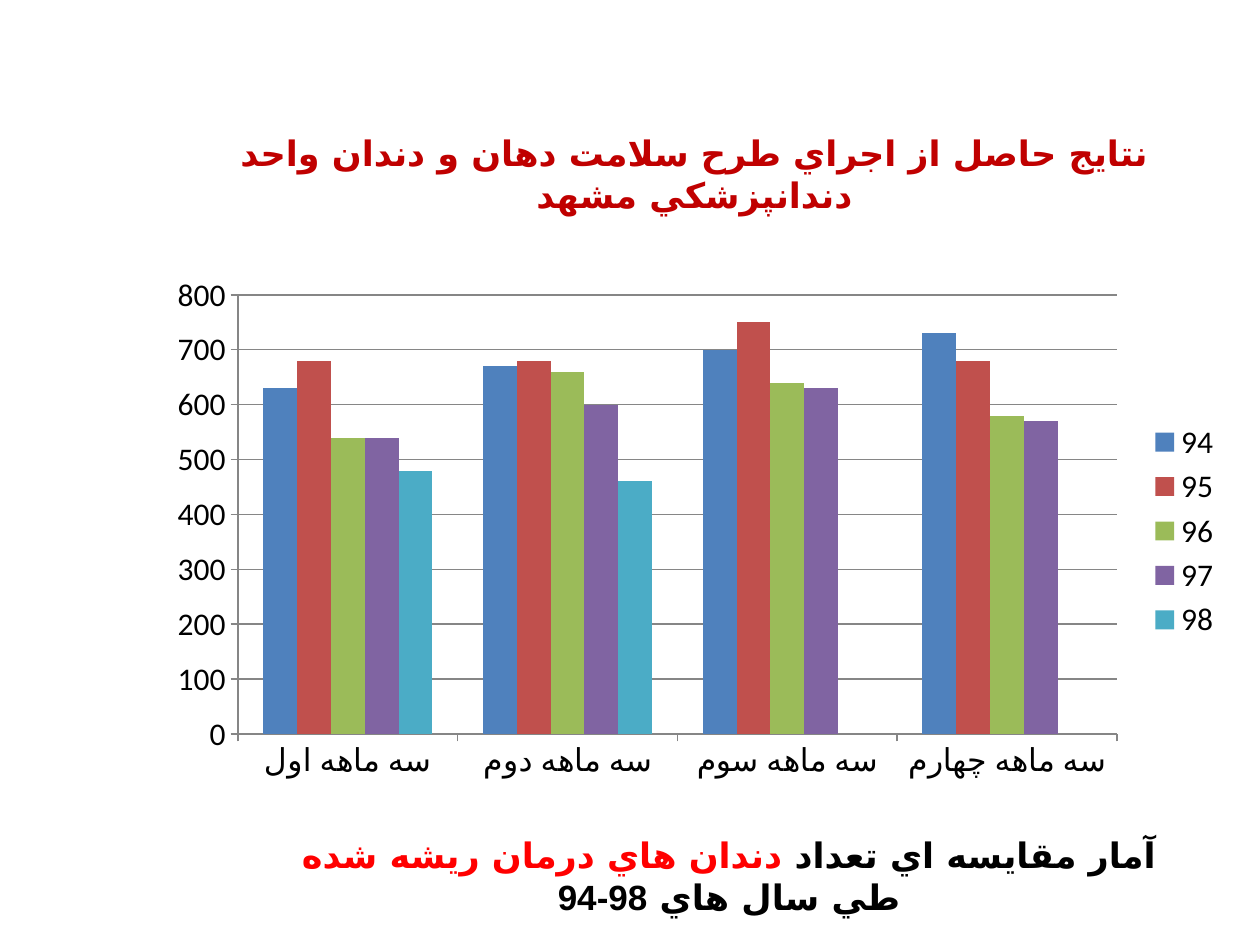
from lxml import etree
from pptx import Presentation
from pptx.chart.data import CategoryChartData
from pptx.dml.color import RGBColor
from pptx.enum.chart import XL_CHART_TYPE, XL_LEGEND_POSITION, XL_TICK_MARK
from pptx.enum.text import MSO_ANCHOR, PP_ALIGN
from pptx.oxml import parse_xml
from pptx.oxml.ns import nsdecls, qn
from pptx.util import Pt

CLUSTERED = XL_CHART_TYPE.COLUMN_CLUSTERED
RIGHT = XL_LEGEND_POSITION.RIGHT
OUTSIDE = XL_TICK_MARK.OUTSIDE
NO_TICK = XL_TICK_MARK.NONE
TOP, MIDDLE = MSO_ANCHOR.TOP, MSO_ANCHOR.MIDDLE
CENTER = PP_ALIGN.CENTER

SCALE = 914400 / 126
FONT = "Calibri"
PERSIAN_FONT = "DejaVu Sans"
DIGIT_FONT = "Arial"
COLORS = {
    "title": "C00000", "text": "000000", "accent": "FF0000", "axis": "868686",
    "94": "4F81BD", "95": "C0504D", "96": "9BBB59", "97": "8064A2", "98": "4BACC6",
}
QUARTERS = ["سه ماهه اول", "سه ماهه دوم", "سه ماهه سوم", "سه ماهه چهارم"]
YEARS = {
    "94": [630, 670, 700, 730],
    "95": [680, 680, 750, 680],
    "96": [540, 660, 640, 580],
    "97": [540, 600, 630, 570],
    "98": [480, 460, None, None],
}


def emu(*lengths):
    return [round(length * SCALE) for length in lengths]


def color(name):
    return RGBColor.from_string(COLORS[name])


class SlideBuilder:
    """Draws right-to-left text and column charts on the current slide."""

    def __init__(self, deck):
        self.slide = deck.slides.add_slide(deck.slide_layouts[6])

    def text(self, place, spans, anchor=TOP, bottom=6):
        box = self.slide.shapes.add_textbox(*emu(*place))
        frame = box.text_frame
        frame.word_wrap = True
        frame.vertical_anchor = anchor
        frame.margin_bottom = emu(bottom)[0]
        para = frame.paragraphs[0]
        para.alignment = CENTER
        for words, name, script_font in spans:
            span = para.add_run()
            span.text = words
            self.style(span.font, 20, name, bold=True)
            script = etree.SubElement(span._r.get_or_add_rPr(), qn("a:cs"))
            script.set("typeface", script_font)
        para._p.get_or_add_pPr().set("rtl", "1")

    def style(self, font, size, name="text", bold=False):
        font.name = FONT
        font.size = Pt(size)
        font.bold = bold
        font.color.rgb = color(name)

    def line(self, line):
        line.color.rgb = color("axis")
        line.width = Pt(0.75)

    def columns(self, place, categories, series, plot_place):
        data = CategoryChartData()
        data.categories = categories
        for name, values in series.items():
            data.add_series(name, values)
        chart = self.slide.shapes.add_chart(CLUSTERED, *emu(*place), data).chart
        chart.has_title = False
        self.style(chart.font, 18)
        chart.has_legend = True
        chart.legend.position = RIGHT
        chart.legend.include_in_layout = False
        plot = chart.plots[0]
        plot.gap_width = 150
        plot.overlap = 0
        plot.vary_by_categories = False
        for bars in plot.series:
            bars.format.fill.solid()
            bars.format.fill.fore_color.rgb = color(bars.name)
        for axis in (chart.category_axis, chart.value_axis):
            axis.major_tick_mark = OUTSIDE
            axis.minor_tick_mark = NO_TICK
            self.line(axis.format.line)
        axis = chart.value_axis
        axis.minimum_scale, axis.maximum_scale, axis.major_unit = 0, 800, 100
        axis.has_major_gridlines = True
        self.line(axis.major_gridlines.format.line)
        width, height = place[2:]
        sides = (width, height, width, height)
        self.place_plot(chart, [part / side for part, side in zip(plot_place, sides)])

    def place_plot(self, chart, fractions):
        area = chart._chartSpace.chart.plotArea
        for old in area.xpath("c:layout"):
            area.remove(old)
        layout = parse_xml(f"<c:layout {nsdecls('c')}><c:manualLayout/></c:layout>")
        tags = {"layoutTarget": "inner", "xMode": "edge", "yMode": "edge"}
        tags.update(zip("xywh", fractions))
        for tag, value in tags.items():
            part = etree.SubElement(layout[0], qn(f"c:{tag}"))
            part.set("val", str(value))
        area.insert(0, layout)


def main():
    deck = Presentation()
    deck.slide_width, deck.slide_height = emu(1260, 945)
    page = SlideBuilder(deck)
    title = "نتايج حاصل از اجراي طرح سلامت دهان و دندان واحد دندانپزشكي مشهد"
    page.text(
        (203, 106, 983, 176), [(title, "title", PERSIAN_FONT)],
        anchor=MIDDLE, bottom=48,
    )
    page.columns((123, 262, 1111, 538), QUARTERS, YEARS, (115, 33, 879, 439))
    page.text(
        (272, 827, 914, 55),
        [
            ("آمار مقايسه اي تعداد ", "text", PERSIAN_FONT),
            ("دندان هاي درمان ريشه شده ", "accent", PERSIAN_FONT),
            ("طي سال هاي ", "text", PERSIAN_FONT),
            ("98-94", "text", DIGIT_FONT),
        ],
    )
    deck.save("out.pptx")


if __name__ == "__main__":
    main()
